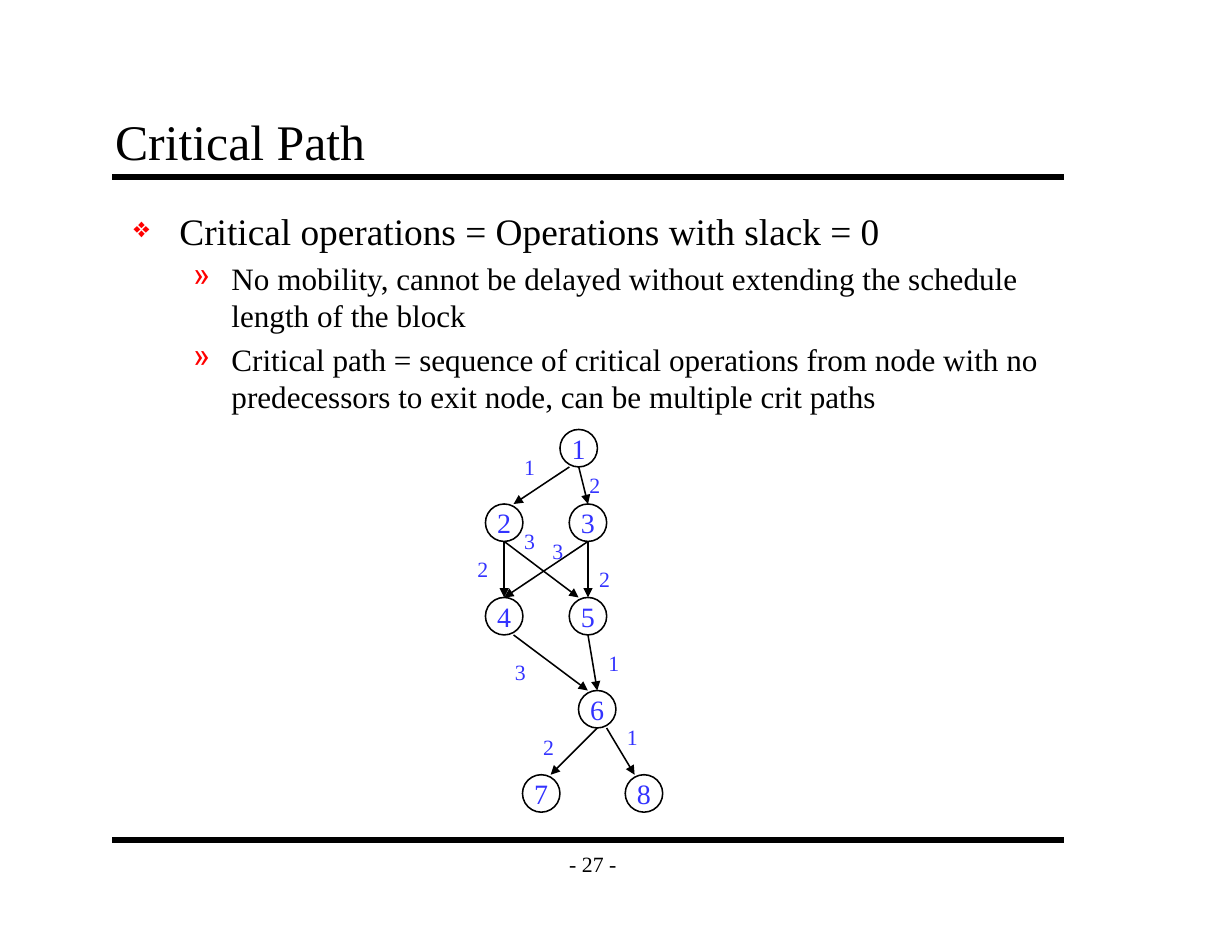
from dataclasses import dataclass

from lxml.etree import SubElement
from pptx import Presentation
from pptx.dml.color import RGBColor
from pptx.enum.shapes import MSO_CONNECTOR, MSO_SHAPE
from pptx.enum.text import MSO_ANCHOR, MSO_AUTO_SIZE, PP_ALIGN
from pptx.oxml.ns import qn
from pptx.util import Cm, Pt


@dataclass(frozen=True)
class Theme:
    face: str = "Times New Roman"
    ink: str = "000000"
    blue: str = "3333FF"
    red: str = "FF0000"
    title: int = 32
    head: int = 24
    body: int = 20
    node: int = 18
    small: int = 14
    rule: int = 4
    thin: int = 1


THEME = Theme()
SIZE = 0.85
SHIFT = SIZE / 4

NODES = {
    1: (12.7, 9.74),
    2: (11.01, 11.43),
    3: (12.91, 11.43),
    4: (11.01, 13.55),
    5: (12.91, 13.55),
    6: (13.12, 15.66),
    7: (11.85, 17.57),
    8: (14.18, 17.57),
}

# start, end, start shift, end shift, delay, label left, label top
EDGES = [
    (1, 2, -1, 1, 1, 11.64, 10.16),
    (1, 3, 0, 0, 2, 13.12, 10.57),
    (2, 5, 0, -1, 3, 11.64, 11.85),
    (3, 4, 0, 0, 3, 12.28, 12.07),
    (3, 5, 0, 0, 2, 13.34, 12.7),
    (2, 4, 0, 0, 2, 10.58, 12.48),
    (4, 6, 1, -1, 3, 11.43, 14.82),
    (5, 6, 0, 0, 1, 13.55, 14.61),
    (6, 8, 1, -1, 1, 13.97, 16.29),
    (6, 7, 0, 1, 2, 12.07, 16.51),
]

POINTS = [
    (0, "Critical operations = Operations with slack = 0"),
    (1, "No mobility, cannot be delayed without extending the schedule "
        "length of the block"),
    (1, "Critical path = sequence of critical operations from node with no "
        "predecessors to exit node, can be multiple crit paths"),
]


def style(para, size, color=THEME.ink, align=PP_ALIGN.LEFT):
    para.alignment = align
    para.font.name = THEME.face
    para.font.size = Pt(size)
    para.font.color.rgb = RGBColor.from_string(color)


def inset(frame, side=0.28, top=0.15):
    frame.margin_left = frame.margin_right = Cm(side)
    frame.margin_top = frame.margin_bottom = Cm(top)


def add_line(slide, x1, y1, x2, y2, width):
    line = slide.shapes.add_connector(
        MSO_CONNECTOR.STRAIGHT, Cm(x1), Cm(y1), Cm(x2), Cm(y2))
    line.line.color.rgb = RGBColor.from_string(THEME.ink)
    line.line.width = Pt(width)
    SubElement(line._element.spPr, qn("a:effectLst"))
    return line


def add_text(slide, box, text, size, color=THEME.ink, align=PP_ALIGN.LEFT):
    frame = slide.shapes.add_textbox(*map(Cm, box)).text_frame
    frame.word_wrap = False
    frame.text = text
    style(frame.paragraphs[0], size, color, align)
    return frame


def add_title(slide, text):
    title = slide.shapes.title
    title.left, title.top, title.width, title.height = map(
        Cm, (2.33, 2.33, 21.59, 1.69))
    frame = title.text_frame
    frame.text = text
    frame.auto_size = MSO_AUTO_SIZE.NONE
    frame.vertical_anchor = MSO_ANCHOR.BOTTOM
    inset(frame)
    style(frame.paragraphs[0], THEME.title)


def add_bullet(para, mark, left, hang, scale):
    props = para._p.get_or_add_pPr()
    props.set("marL", str(Cm(left)))
    props.set("indent", str(-Cm(hang)))
    tint = SubElement(props, qn("a:buClr"))
    SubElement(tint, qn("a:srgbClr")).set("val", THEME.red)
    SubElement(props, qn("a:buSzPct")).set("val", str(scale * 1000))
    SubElement(props, qn("a:buChar")).set("char", mark)


def add_points(slide):
    frame = slide.shapes.add_textbox(
        Cm(2.75), Cm(4.57), Cm(21.38), Cm(14.48)).text_frame
    frame.word_wrap = True
    inset(frame)
    for i, (level, text) in enumerate(POINTS):
        para = frame.add_paragraph() if i else frame.paragraphs[0]
        para.text = text
        para.level = level
        size = THEME.body if level else THEME.head
        if level:
            add_bullet(para, "»", 2.22, 0.87, 100)
        else:
            add_bullet(para, "❖", 1.04, 1.04, 75)
        para.space_before = Pt(size * 0.2)
        style(para, size)


def add_node(slide, name, left, top):
    node = slide.shapes.add_shape(
        MSO_SHAPE.OVAL, Cm(left), Cm(top), Cm(SIZE), Cm(SIZE))
    node.shadow.inherit = False
    node.fill.background()
    node.line.color.rgb = RGBColor.from_string(THEME.ink)
    node.line.width = Pt(THEME.thin)
    frame = node.text_frame
    frame.word_wrap = False
    frame.vertical_anchor = MSO_ANCHOR.MIDDLE
    frame.text = str(name)
    style(frame.paragraphs[0], THEME.node, THEME.blue, PP_ALIGN.CENTER)
    return node


def add_edge(slide, nodes, start, end, out, into):
    (x1, y1), (x2, y2) = NODES[start], NODES[end]
    mid = SIZE / 2
    edge = add_line(slide, x1 + mid + out * SHIFT, y1 + SIZE,
                    x2 + mid + into * SHIFT, y2, THEME.thin)
    SubElement(edge.line._get_or_add_ln(), qn("a:tailEnd")).set(
        "type", "triangle")
    if not into:
        edge.end_connect(nodes[end], 0)


def add_graph(slide):
    nodes = {name: add_node(slide, name, *spot)
             for name, spot in NODES.items()}
    for start, end, out, into, delay, left, top in EDGES:
        add_edge(slide, nodes, start, end, out, into)
        add_text(slide, (left, top, 0.76, 0.85), str(delay),
                 THEME.small, THEME.blue)


def main():
    deck = Presentation()
    deck.slide_width, deck.slide_height = Cm(27.94), Cm(21.59)
    slide = deck.slides.add_slide(deck.slide_layouts[5])
    for y in (4.02, 19.05):
        add_line(slide, 2.54, y, 24.13, y, THEME.rule)
    page = add_text(slide, (12.49, 19.05, 1.91, 1.06), "- 27 -",
                    THEME.small, align=PP_ALIGN.CENTER)
    page.vertical_anchor = MSO_ANCHOR.MIDDLE
    inset(page)
    add_title(slide, "Critical Path")
    add_points(slide)
    add_graph(slide)
    deck.save("out.pptx")


if __name__ == "__main__":
    main()
